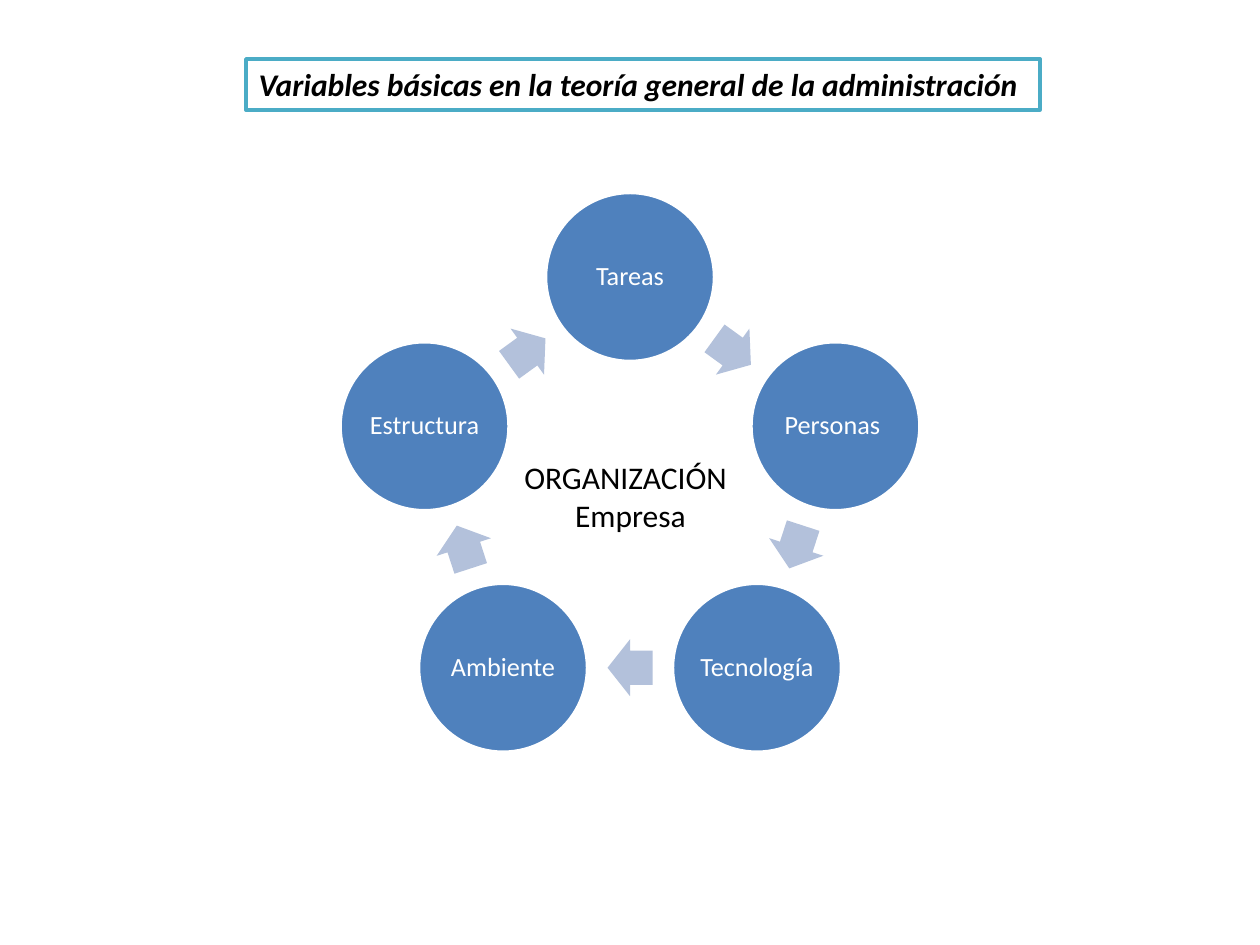
import math

from pptx import Presentation
from pptx import util as u
from pptx.dml.color import RGBColor
from pptx.enum import shapes, text

# Content
TITLE = "Variables básicas en la teoría general de la administración"
VARIABLES = ["Tareas", "Personas ", "Tecnología", "Ambiente", "Estructura"]
CORE = [("ORGANIZACIÓN", text.PP_ALIGN.LEFT), ("Empresa", text.PP_ALIGN.CENTER)]

COLORS = {"circle": "4F81BD", "arrow": "B3C1DB", "frame": "4BACC6",
          "white": "FFFFFF", "black": "000000"}
FONT = "Calibri"

# Layout in px
PX_PER_INCH = 126
TITLE_BOX = (246, 59, 794, 51)
CORE_BOX = (512, 452, 237, 89)
RING_X, RING_Y, RING_RADIUS = 630, 493, 216
CIRCLE = 169
ARROW_W, ARROW_H = 45, 57
INSET = 2


def px(value):
    return u.Emu(round(value * 914400 / PX_PER_INCH))


def color(name):
    return RGBColor.from_string(COLORS[name])


def centered(x, y, width, height):
    return [px(v) for v in (x - width / 2, y - height / 2, width, height)]


def on_ring(degrees, radius):
    angle = math.radians(degrees)
    return RING_X + radius * math.sin(angle), RING_Y - radius * math.cos(angle)


def add_run(paragraph, words, size, ink, align, emphasis=False):
    paragraph.alignment = align
    run = paragraph.add_run()
    run.text = words
    run.font.name = FONT
    run.font.size = u.Pt(size)
    run.font.bold = run.font.italic = emphasis
    run.font.color.rgb = color(ink)


def add_filled(kind, box, fill):
    shape = slide.shapes.add_shape(kind, *box)
    shape.shadow.inherit = False
    shape.fill.solid()
    shape.fill.fore_color.rgb = color(fill)
    return shape


def set_outline(shape, name):
    shape.line.color.rgb = color(name)
    shape.line.width = u.Pt(2)


prs = Presentation()
prs.slide_width, prs.slide_height = u.Inches(10), u.Inches(7.5)
slide = prs.slides.add_slide(prs.slide_layouts[5])

# Ring of variables, each followed by an arrow to the next
step = 360 / len(VARIABLES)
for i, variable in enumerate(VARIABLES):
    circle = add_filled(shapes.MSO_SHAPE.OVAL,
                        centered(*on_ring(i * step, RING_RADIUS), CIRCLE, CIRCLE),
                        "circle")
    set_outline(circle, "white")
    frame = circle.text_frame
    frame.word_wrap = True
    frame.vertical_anchor = text.MSO_ANCHOR.MIDDLE
    frame.margin_left = frame.margin_right = px(INSET)
    frame.margin_top = frame.margin_bottom = px(INSET)
    label = frame.paragraphs[0]
    label.line_spacing = 0.9
    add_run(label, variable, 15, "white", text.PP_ALIGN.CENTER)

    half = step / 2
    midpoint = on_ring(i * step + half, RING_RADIUS * math.cos(math.radians(half)))
    arrow = add_filled(shapes.MSO_SHAPE.RIGHT_ARROW,
                       centered(*midpoint, ARROW_W, ARROW_H), "arrow")
    arrow.line.fill.background()
    arrow.adjustments[0], arrow.adjustments[1] = 0.6, 0.5
    arrow.rotation = i * step + half

# Framed title
title = slide.shapes.title
title.left, title.top, title.width, title.height = map(px, TITLE_BOX)
title.fill.solid()
title.fill.fore_color.rgb = color("white")
set_outline(title, "frame")
title.text_frame.word_wrap = True
title.text_frame.auto_size = text.MSO_AUTO_SIZE.NONE
title.text_frame.vertical_anchor = text.MSO_ANCHOR.TOP
add_run(title.text_frame.paragraphs[0], TITLE, 18, "black",
        text.PP_ALIGN.LEFT, emphasis=True)

# Organisation at the centre
core = slide.shapes.add_textbox(*map(px, CORE_BOX)).text_frame
core.word_wrap = True
for i, (words, align) in enumerate(CORE):
    paragraph = core.add_paragraph() if i else core.paragraphs[0]
    add_run(paragraph, words, 18, "black", align)

prs.save("out.pptx")
